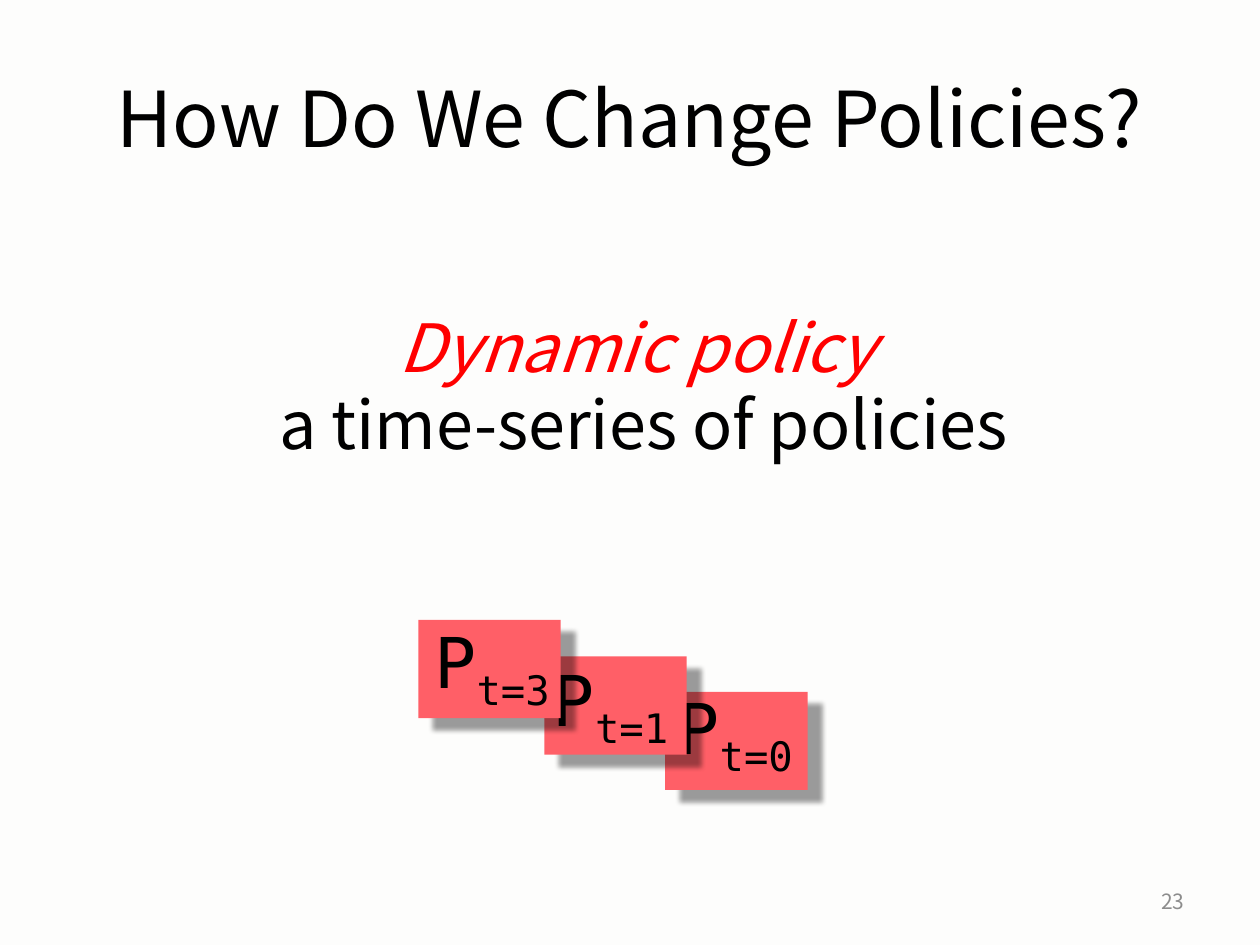
import lxml.etree
import pptx
import pptx.dml.color
import pptx.enum.shapes
import pptx.enum.text
import pptx.oxml.ns
import pptx.util

Inches = pptx.util.Inches
Pt = pptx.util.Pt
Align = pptx.enum.text.PP_ALIGN
Anchor = pptx.enum.text.MSO_ANCHOR

COLORS = {
    "paper": "FDFDFC",
    "ink": "000000",
    "accent": "FF0000",
    "card": "FF5F67",
    "muted": "8C8C8C",
}
BODY_FONT = "Noto Sans CJK JP"
CODE_FONT = "DejaVu Sans Mono"


def color(name):
    return pptx.dml.color.RGBColor.from_string(COLORS[name])


class PolicySlide:
    def __init__(self, deck):
        self.page = deck.slides.add_slide(deck.slide_layouts[6])
        fill = self.page.background.fill
        fill.solid()
        fill.fore_color.rgb = color("paper")

    def style(self, span, size, tone="ink", font=BODY_FONT, italic=False):
        span.font.name = font
        span.font.size = Pt(size)
        span.font.color.rgb = color(tone)
        span.font.italic = italic

    def text(self, place, lines, size, align, anchor=Anchor.TOP, spacing=None):
        box = self.page.shapes.add_textbox(*map(Inches, place))
        frame = box.text_frame
        frame.word_wrap = True
        frame.vertical_anchor = anchor
        frame.text = "\n".join(line for line, tone, italic in lines)
        for para, (line, tone, italic) in zip(frame.paragraphs, lines):
            para.alignment = align
            if spacing:
                para.line_spacing, para.space_before = spacing
            self.style(para.runs[0], size, tone, italic=italic)

    def shadow(self, shape):
        shape.shadow.inherit = False
        effects = shape._element.spPr.find(pptx.oxml.ns.qn("a:effectLst"))
        outer = lxml.etree.SubElement(
            effects, pptx.oxml.ns.qn("a:outerShdw"),
            blurRad=str(Pt(3.1)), dist=str(Pt(11)), dir=str(39 * 60000),
            algn="tl", rotWithShape="0")
        tint = lxml.etree.SubElement(
            outer, pptx.oxml.ns.qn("a:srgbClr"), val=COLORS["ink"])
        lxml.etree.SubElement(tint, pptx.oxml.ns.qn("a:alpha"), val="38000")

    def policy(self, card_at, label_at, subscript):
        group = self.page.shapes.add_group_shape()
        card = group.shapes.add_shape(
            pptx.enum.shapes.MSO_SHAPE.RECTANGLE,
            *map(Inches, (*card_at, 1.13, 0.78)))
        card.fill.solid()
        card.fill.fore_color.rgb = color("card")
        card.line.fill.background()
        self.shadow(card)
        label = group.shapes.add_textbox(*map(Inches, (*label_at, 1.13, 0.77)))
        label.text_frame.word_wrap = False
        label.text_frame.auto_size = pptx.enum.text.MSO_AUTO_SIZE.SHAPE_TO_FIT_TEXT
        para = label.text_frame.paragraphs[0]
        para.text = "P"
        para.add_run().text = subscript
        for span in para.runs:
            self.style(span, 40, font=CODE_FONT)
        para.runs[1]._r.get_or_add_rPr().set("baseline", "-25000")


def main():
    deck = pptx.Presentation()
    deck.slide_width = Inches(10)
    deck.slide_height = Inches(7.5)
    slide = PolicySlide(deck)
    slide.text((0.5, 0.3, 9, 1.25),
               [("How Do We Change Policies?", "ink", False)],
               44, Align.CENTER, Anchor.MIDDLE)
    slide.text((0.44, 2.45, 9.34, 4.95),
               [("Dynamic policy ", "accent", True),
                ("a time-series of policies", "ink", False)],
               38, Align.CENTER, spacing=(0.9, Pt(3)))
    slide.text((7.17, 6.95, 2.33, 0.4), [("23", "muted", False)],
               12, Align.RIGHT, Anchor.MIDDLE)
    for card_at, label_at, subscript in (
        ((5.28, 5.49), (5.28, 5.38), "t=0"),
        ((4.32, 5.21), (4.29, 5.16), "t=1"),
        ((3.32, 4.92), (3.35, 4.86), "t=3"),
    ):
        slide.policy(card_at, label_at, subscript)
    deck.save("out.pptx")


if __name__ == "__main__":
    main()
